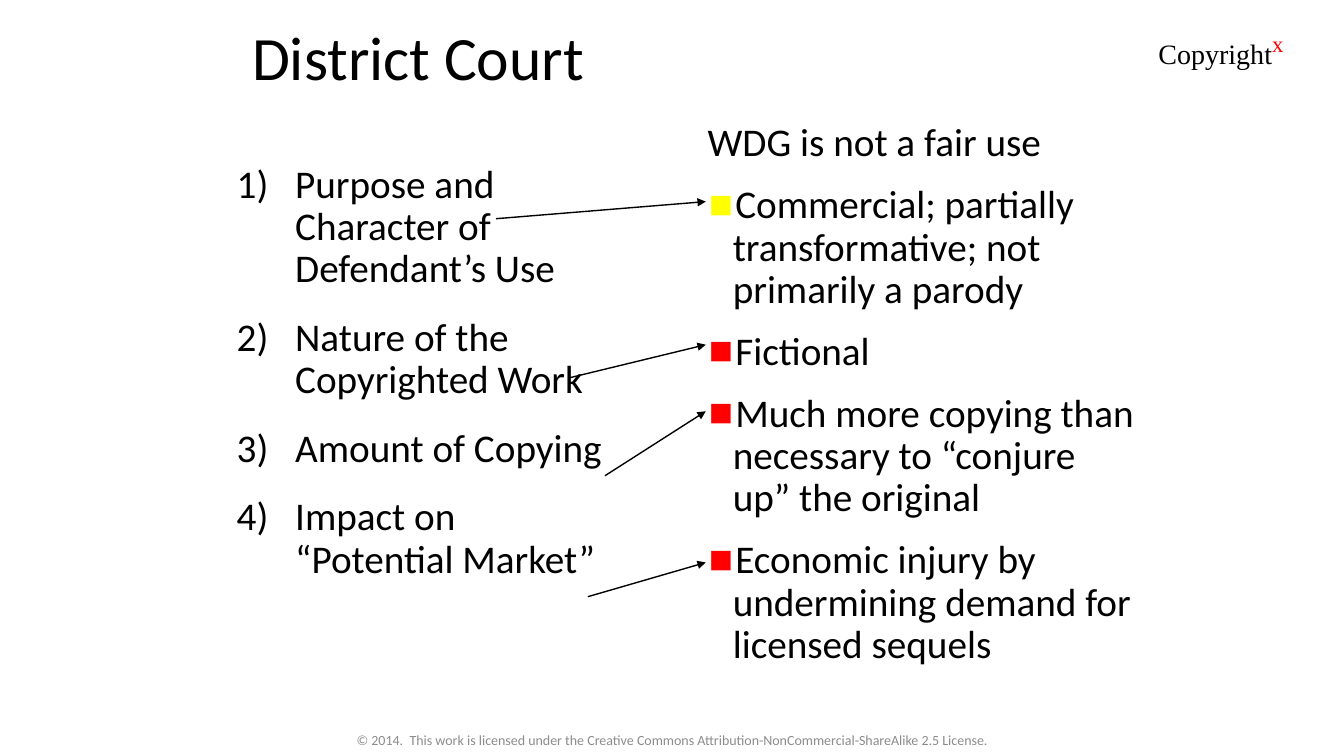
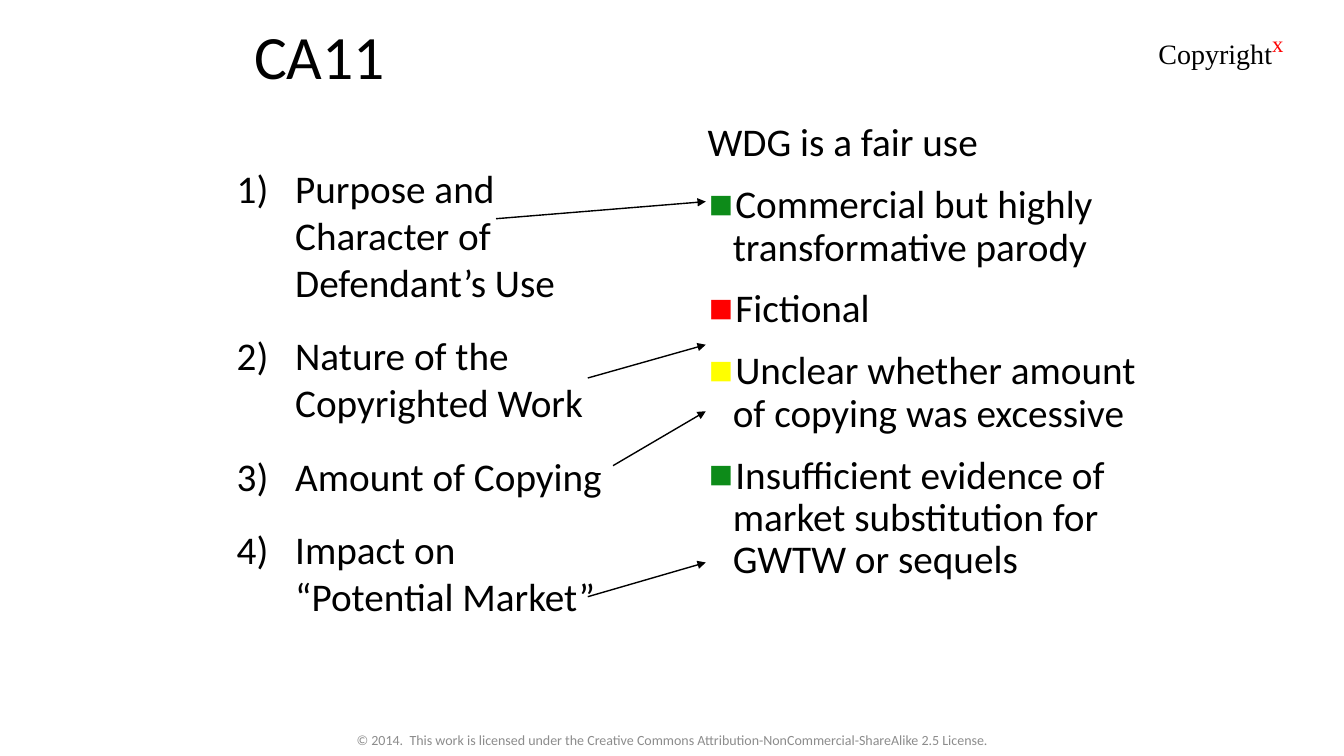
"""Build two slides comparing fair-use rulings factor by factor."""
from lxml import etree
from pptx import Presentation
from pptx.dml.color import RGBColor
from pptx.enum.shapes import MSO_CONNECTOR
from pptx.enum.text import MSO_ANCHOR, MSO_AUTO_SIZE, PP_ALIGN
from pptx.oxml.ns import qn
from pptx.util import Emu, Pt

STRAIGHT = MSO_CONNECTOR.STRAIGHT
MIDDLE, TOP = MSO_ANCHOR.MIDDLE, MSO_ANCHOR.TOP
LEFT, CENTER = PP_ALIGN.LEFT, PP_ALIGN.CENTER
NO_FIT = MSO_AUTO_SIZE.NONE
TITLE_ONLY = 5
EMU_PER_PX = 9144

COLORS = {
    "black": "000000",
    "gray": "8C8C8C",
    "red": "FF0000",
    "yellow": "FFFF00",
    "green": "0D8B19",
}
SANS, SERIF = "Calibri", "Times New Roman"
SLIDE_SIZE = (1333, 750)
COURSE_BOX = (1139, 20, 149, 44)
FACTORS_BOX = (225, 158, 383, 533)
FINDINGS_BOX = (692, 117, 450, 583)
LICENSE_BOX = (291, 717, 751, 34)
TITLE_SIZE = (850, 83)
ARROW_TIP_X = 700
ARROW_TIPS_Y = (200, 342, 408, 558)

FACTORS = [
    "Purpose and Character of Defendant’s Use",
    "Nature of the Copyrighted Work",
    "Amount of Copying",
    "Impact on “Potential Market”",
]
LICENSE = ("© 2014.  This work is licensed under the Creative Commons "
           "Attribution-NonCommercial-ShareAlike 2.5 License.")

RULINGS = [
    {
        "court": "District Court",
        "title_at": (240, 19),
        "factor_spacing": 0.9,
        "holding": "WDG is not a fair use",
        "findings": [
            ("yellow", "Commercial; partially transformative; not primarily a parody"),
            ("red", "Fictional"),
            ("red", "Much more copying than necessary to “conjure up” the original"),
            ("red", "Economic injury by undermining demand for licensed sequels"),
        ],
        "arrow_starts": [(492, 217), (564, 375), (600, 472), (583, 592)],
    },
    {
        "court": "CA11",
        "title_at": (242, 18),
        "factor_spacing": 1.0,
        "holding": "WDG is a fair use",
        "findings": [
            ("green", "Commercial but highly transformative parody"),
            ("red", "Fictional"),
            ("yellow", "Unclear whether amount of copying was excessive"),
            ("green", "Insufficient evidence of market substitution for GWTW or sequels"),
        ],
        "arrow_starts": [(492, 217), (583, 375), (608, 462), (583, 592)],
    },
]


def px(value):
    return Emu(value * EMU_PER_PX)


def add_span(para, text, size, font=SANS, color="black"):
    span = para.add_run()
    span.text = text
    span.font.size = Pt(size)
    span.font.name = font
    span.font.color.rgb = RGBColor.from_string(COLORS[color])
    return span


def add_box(page, place, anchor=TOP):
    frame = page.shapes.add_textbox(*map(px, place)).text_frame
    frame.word_wrap = True
    frame.vertical_anchor = anchor
    return frame


def add_mark(para, tag, **attributes):
    properties = para._p.get_or_add_pPr()
    return etree.SubElement(properties, qn(tag), attributes)


def add_square(para, color):
    etree.SubElement(add_mark(para, "a:buClr"), qn("a:srgbClr"), val=COLORS[color])
    add_mark(para, "a:buSzPct", val="200000")
    add_mark(para, "a:buFont", typeface=SERIF)
    add_mark(para, "a:buChar", char="▪")


def add_number(para):
    add_mark(para, "a:buFont", typeface=SANS)
    add_mark(para, "a:buAutoNum", type="arabicParenR")


def add_item(frame, index, text, indent, line_spacing, space_before):
    para = frame.add_paragraph() if index else frame.paragraphs[0]
    properties = para._p.get_or_add_pPr()
    properties.set("marL", str(px(indent)))
    properties.set("indent", str(px(-indent)))
    para.line_spacing = line_spacing
    if index:
        para.space_before = Pt(space_before)
    add_span(para, text, 28)
    return para


def add_title(page, text, place):
    title = page.shapes.title
    title.left, title.top, title.width, title.height = map(px, place + TITLE_SIZE)
    frame = title.text_frame
    frame.auto_size = NO_FIT
    frame.vertical_anchor = MIDDLE
    para = frame.paragraphs[0]
    para.alignment = LEFT
    para.line_spacing = 0.9
    add_span(para, text, 44)


def add_course_name(page):
    para = add_box(page, COURSE_BOX).paragraphs[0]
    add_span(para, "Copyright", 20, SERIF)
    raised = add_span(para, "x", 28, SERIF, "red")
    raised.font._element.set("baseline", "30000")


def add_license(page):
    para = add_box(page, LICENSE_BOX, MIDDLE).paragraphs[0]
    para.alignment = CENTER
    add_span(para, LICENSE, 10, color="gray")


def add_factors(page, line_spacing):
    frame = add_box(page, FACTORS_BOX)
    for index, factor in enumerate(FACTORS):
        add_number(add_item(frame, index, factor, 58, line_spacing, 18.7))


def add_findings(page, holding, findings):
    frame = add_box(page, FINDINGS_BOX)
    add_item(frame, 0, holding, 25, 0.9, 0)
    for index, (color, finding) in enumerate(findings, 1):
        add_square(add_item(frame, index, finding, 25, 0.9, 14), color)


def add_arrow(page, start, tip):
    arrow = page.shapes.add_connector(STRAIGHT, *map(px, start + tip))
    arrow.line.width = Pt(1)
    arrow.line.color.rgb = RGBColor.from_string(COLORS["black"])
    etree.SubElement(arrow.line._get_or_add_ln(), qn("a:tailEnd"), type="triangle")
    etree.SubElement(arrow._element.spPr, qn("a:effectLst"))


def main():
    deck = Presentation()
    deck.slide_width, deck.slide_height = map(px, SLIDE_SIZE)
    for ruling in RULINGS:
        page = deck.slides.add_slide(deck.slide_layouts[TITLE_ONLY])
        add_course_name(page)
        add_title(page, ruling["court"], ruling["title_at"])
        add_factors(page, ruling["factor_spacing"])
        add_findings(page, ruling["holding"], ruling["findings"])
        for start, tip_y in zip(ruling["arrow_starts"], ARROW_TIPS_Y):
            add_arrow(page, start, (ARROW_TIP_X, tip_y))
        add_license(page)
    deck.save("out.pptx")


if __name__ == "__main__":
    main()
